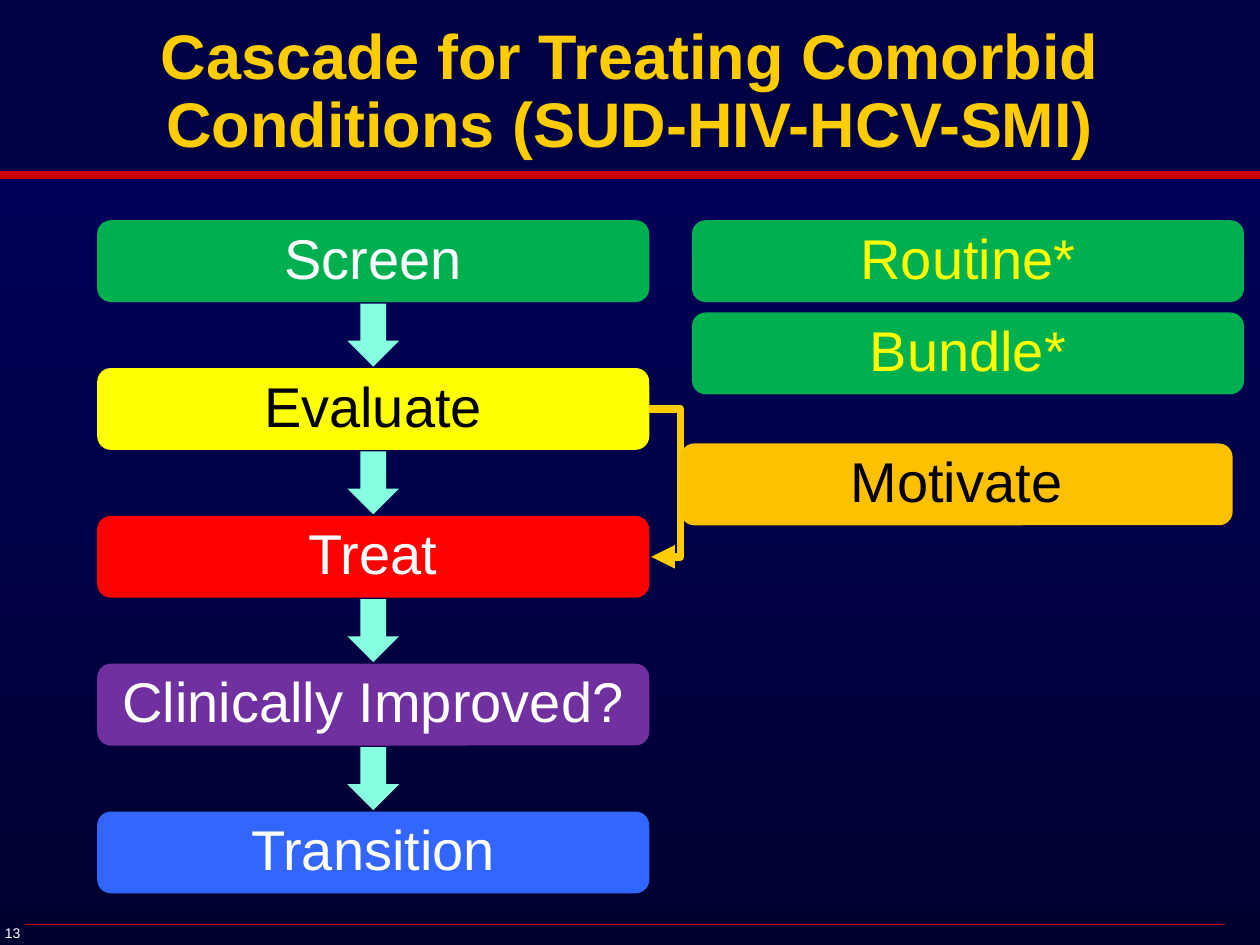
from dataclasses import dataclass

import pptx
import pptx.dml.color
import pptx.enum.shapes
import pptx.enum.text
import pptx.oxml.ns
import pptx.oxml.xmlchemy
import pptx.util

COLORS = {
    "background_top": "000064", "background_bottom": "00002F", "header": "000044",
    "rule": "CC0000", "gold": "FFCC00", "white": "FFFFFF", "black": "000000",
    "green": "00B050", "yellow": "FFFF00", "red": "FF0000", "purple": "7030A0",
    "blue": "3366FF", "orange": "FFC000", "arrow": "85FFE0",
}
SHAPES = pptx.enum.shapes.MSO_SHAPE
CONNECTORS = pptx.enum.shapes.MSO_CONNECTOR
ALIGN = pptx.enum.text.PP_ALIGN
ANCHOR = pptx.enum.text.MSO_ANCHOR

# Cascade grid, in centimetres
BOX_WIDTH, BOX_HEIGHT = 11.13, 1.65
STEP_LEFT, STEP_TOP, STEP_PITCH = 1.96, 4.44, 2.98
ARROW_WIDTH, ARROW_HEIGHT, ARROW_GAP = 1.04, 1.27, 0.03


@dataclass
class Box:
    text: str
    left: float
    top: float
    fill: str
    color: str


def step_top(index: int) -> float:
    return STEP_TOP + index * STEP_PITCH


def rgb(name: str) -> pptx.dml.color.RGBColor:
    return pptx.dml.color.RGBColor.from_string(COLORS[name])


def centimetres(*lengths: float) -> list:
    return [pptx.util.Cm(length) for length in lengths]


def write_text(shape, text: str, *, size: float, color: str, bold: bool = False,
               align=ALIGN.CENTER, anchor=ANCHOR.MIDDLE, spacing: float = 0.9) -> None:
    frame = shape.text_frame
    frame.word_wrap = True
    frame.vertical_anchor = anchor
    paragraph = frame.paragraphs[0]
    paragraph.alignment = align
    paragraph.line_spacing = spacing
    run = paragraph.add_run()
    run.text = text
    run.font.name = "Arial"
    run.font.size = pptx.util.Pt(size)
    run.font.bold = bold
    run.font.color.rgb = rgb(color)


def add_filled(slide, kind, left: float, top: float, width: float, height: float, fill: str):
    shape = slide.shapes.add_shape(kind, *centimetres(left, top, width, height))
    shape.shadow.inherit = False
    shape.fill.solid()
    shape.fill.fore_color.rgb = rgb(fill)
    shape.line.fill.background()
    return shape


def add_box(slide, box: Box) -> None:
    shape = add_filled(slide, SHAPES.ROUNDED_RECTANGLE, box.left, box.top,
                       BOX_WIDTH, BOX_HEIGHT, box.fill)
    write_text(shape, box.text, size=32, color=box.color)


def add_line(slide, kind, start: tuple, end: tuple, color: str, width: float):
    line = slide.shapes.add_connector(kind, *centimetres(*start, *end))
    line.line.color.rgb = rgb(color)
    line.line.width = pptx.util.Pt(width)
    line._element.spPr.append(pptx.oxml.xmlchemy.OxmlElement("a:effectLst"))
    return line


def add_bypass(slide, start: tuple, end: tuple, bend: float) -> None:
    """Elbow arrow that runs out to x = bend and back."""
    line = add_line(slide, CONNECTORS.ELBOW, start, end, "gold", 4.5)
    guide = pptx.oxml.xmlchemy.OxmlElement("a:gd")
    guide.set("name", "adj1")
    guide.set("fmla", f"val {round((bend - start[0]) / (end[0] - start[0]) * 100000)}")
    properties = line._element.spPr
    properties.find(".//" + pptx.oxml.ns.qn("a:avLst")).append(guide)
    head = pptx.oxml.xmlchemy.OxmlElement("a:tailEnd")
    head.set("type", "triangle")
    properties.find(pptx.oxml.ns.qn("a:ln")).append(head)


def add_text(slide, text: str, left: float, top: float, width: float, height: float,
             **text_format) -> None:
    shape = slide.shapes.add_textbox(*centimetres(left, top, width, height))
    write_text(shape, text, **text_format)


def main() -> None:
    presentation = pptx.Presentation()
    presentation.slide_width, presentation.slide_height = centimetres(25.4, 19.05)
    slide = presentation.slides.add_slide(presentation.slide_layouts[6])

    # Background gradient, top to bottom
    background = slide.background.fill
    background.gradient()
    background.gradient_angle = 270
    for stop, position, name in zip(background.gradient_stops, (0, 1),
                                    ("background_top", "background_bottom")):
        stop.position = position
        stop.color.rgb = rgb(name)

    # Header band, rules, slide number and title
    add_filled(slide, SHAPES.RECTANGLE, -0.1, -0.08, 25.7, 3.5, "header")
    add_line(slide, CONNECTORS.STRAIGHT, (26.11, 3.53), (-0.41, 3.53), "rule", 4.5)
    add_line(slide, CONNECTORS.STRAIGHT, (24.69, 18.64), (0.51, 18.64), "rule", 0.25)
    add_text(slide, "13", -0.15, 18.52, 1.07, 0.58, size=8, color="white",
             align=ALIGN.LEFT, anchor=ANCHOR.TOP, spacing=1.0)
    add_text(slide, "Cascade for Treating Comorbid Conditions (SUD-HIV-HCV-SMI)",
             0, 0.28, 25.4, 3.18, size=36, color="gold", bold=True)

    # Cascade steps with down arrows between them
    steps = [
        ("Screen", "green", "white"),
        ("Evaluate", "yellow", "black"),
        ("Treat", "red", "white"),
        ("Clinically Improved?", "purple", "white"),
        ("Transition", "blue", "white"),
    ]
    arrow_left = STEP_LEFT + (BOX_WIDTH - ARROW_WIDTH) / 2
    for index, (text, fill, color) in enumerate(steps):
        add_box(slide, Box(text, STEP_LEFT, step_top(index), fill, color))
        if index < len(steps) - 1:
            add_filled(slide, SHAPES.DOWN_ARROW, arrow_left,
                       step_top(index) + BOX_HEIGHT + ARROW_GAP,
                       ARROW_WIDTH, ARROW_HEIGHT, "arrow")

    # Bypass from Evaluate to Treat, behind the Motivate box
    right = STEP_LEFT + BOX_WIDTH
    motivate_left = 13.72
    add_bypass(slide, (right, step_top(1) + BOX_HEIGHT / 2),
               (right + 0.04, step_top(2) + BOX_HEIGHT / 2), motivate_left)

    # Side boxes
    for box in (
        Box("Motivate", motivate_left, 8.94, "orange", "black"),
        Box("Routine*", 13.95, STEP_TOP, "green", "yellow"),
        Box("Bundle*", 13.95, 6.3, "green", "yellow"),
    ):
        add_box(slide, box)

    presentation.save("out.pptx")


if __name__ == "__main__":
    main()
